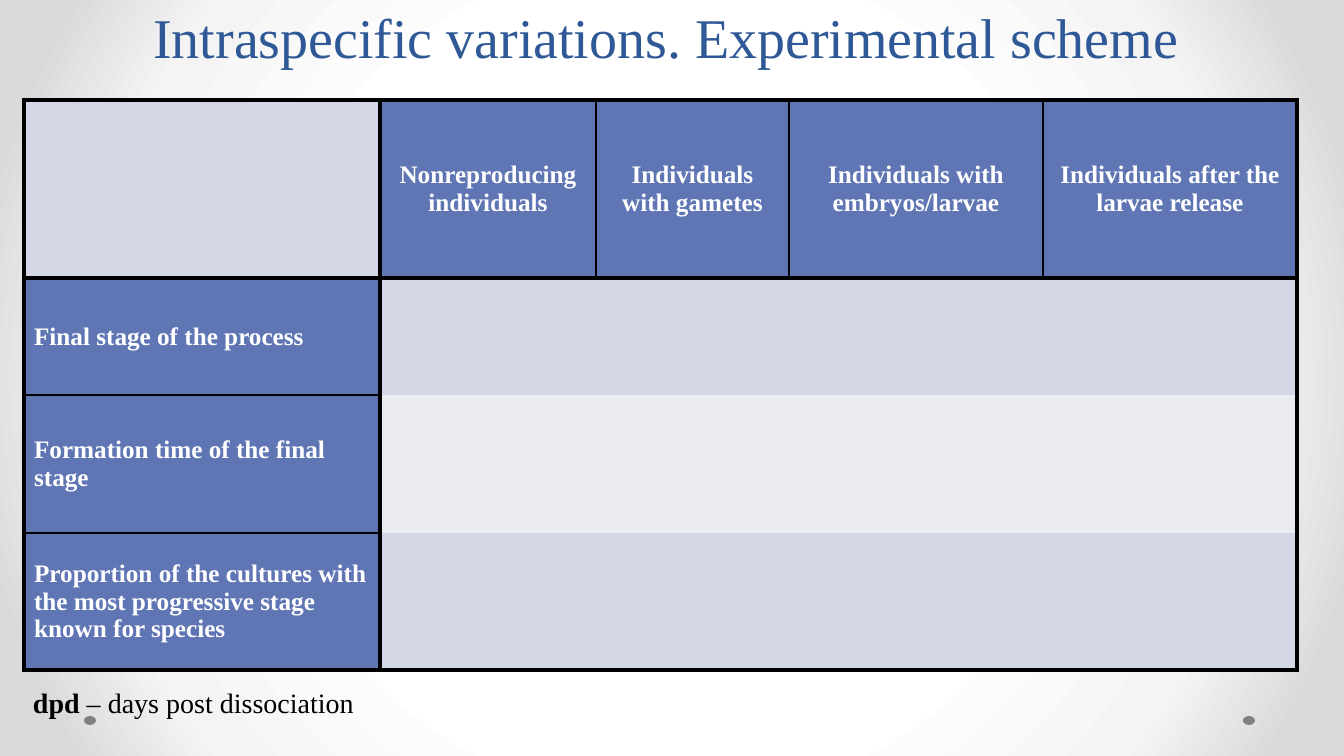
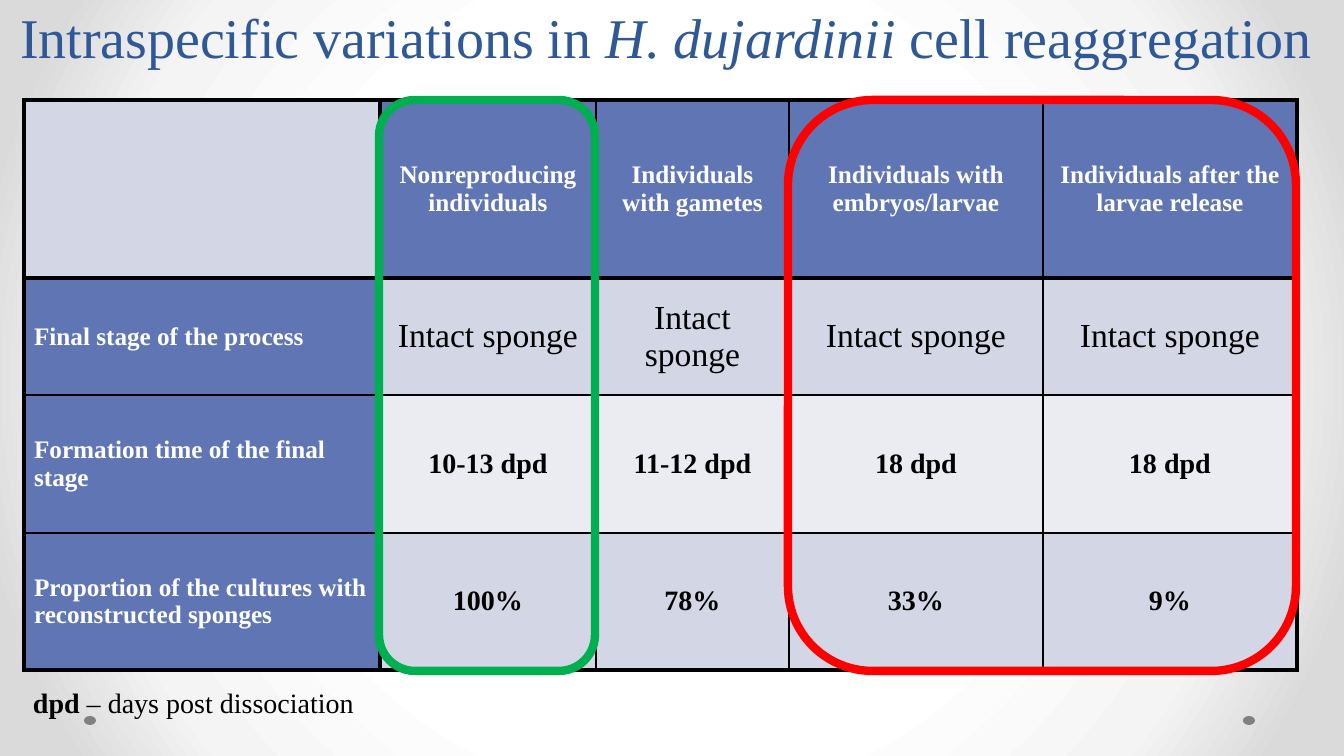
from itertools import accumulate

from pptx import Presentation
from pptx.dml.color import RGBColor
from pptx.enum.shapes import MSO_SHAPE as Shape
from pptx.enum.text import MSO_ANCHOR as Anchor, MSO_AUTO_SIZE as AutoSize, PP_ALIGN as Align
from pptx.oxml import parse_xml
from pptx.oxml.ns import nsdecls, qn
from pptx.util import Emu, Pt

SLIDE_W, SLIDE_H = 1344, 756
EMU_PER_PX = 12192000 / SLIDE_W

FONT = "Times New Roman"
TITLE_BLUE = RGBColor(0x2F, 0x58, 0x97)
HEADER_BLUE = RGBColor(0x60, 0x76, 0xB4)
BAND_DARK = RGBColor(0xD2, 0xD6, 0xE5)
BAND_LIGHT = RGBColor(0xEA, 0xEC, 0xF2)
DOT_GREY = RGBColor(0x80, 0x80, 0x80)
GREEN = RGBColor(0x00, 0xB0, 0x50)
RED = RGBColor(0xFF, 0x00, 0x00)
BLACK = RGBColor(0x00, 0x00, 0x00)
WHITE = RGBColor(0xFF, 0xFF, 0xFF)
BACKDROP_STOPS = [(50, "FFFFFF"), (76, "F4F4F4"), (92, "DADADA")]

TABLE_LEFT, TABLE_TOP = 24, 100
COLUMN_WIDTHS = [356, 216, 193, 254, 254]
ROW_HEIGHTS = [178, 117, 138, 137]
COLUMN_EDGES = list(accumulate(COLUMN_WIDTHS, initial=TABLE_LEFT))
THICK, THIN = Pt(3), Pt(1)

HEADERS = ["", "Nonreproducing individuals", "Individuals with gametes",
           "Individuals with embryos/larvae", "Individuals after the larvae release"]
FINAL_STAGE = "Final stage of the process"
FORMATION_TIME = "Formation time of the final stage"
SCHEME_ROWS = [
    HEADERS,
    [FINAL_STAGE] + [""] * 4,
    [FORMATION_TIME] + [""] * 4,
    ["Proportion of the cultures with the most progressive stage known for species"] + [""] * 4,
]
RESULT_ROWS = [
    HEADERS,
    [FINAL_STAGE] + ["Intact sponge"] * 4,
    [FORMATION_TIME, "10-13 dpd", "11-12 dpd", "18 dpd", "18 dpd"],
    ["Proportion of the cultures with reconstructed sponges", "100%", "78%", "33%", "9%"],
]


def px(*lengths):
    return [Emu(round(length * EMU_PER_PX)) for length in lengths]


def write_text(frame, *runs, size, color, bold=False, align=Align.LEFT,
               anchor=Anchor.TOP, line_spacing=None, space_before=None):
    """Fill one paragraph; a run is a string or a (string, font overrides) pair."""
    frame.word_wrap = True
    frame.vertical_anchor = anchor
    paragraph = frame.paragraphs[0]
    paragraph.alignment = align
    paragraph.line_spacing = line_spacing
    paragraph.space_before = space_before
    for entry in runs:
        text, overrides = (entry, {}) if isinstance(entry, str) else entry
        run = paragraph.add_run()
        run.text = text
        font = run.font
        font.name, font.size, font.bold = FONT, Pt(size), bold
        font.color.rgb = color
        for attribute, value in overrides.items():
            setattr(font, attribute, value)


def add_outline_shape(slide, kind, box, fill=None, line=None, line_width=None):
    shape = slide.shapes.add_shape(kind, *px(*box))
    shape.shadow.inherit = False
    if fill is None:
        shape.fill.background()
    else:
        shape.fill.solid()
        shape.fill.fore_color.rgb = fill
    if line is None:
        shape.line.fill.background()
    else:
        shape.line.color.rgb = line
        shape.line.width = Pt(line_width)
    return shape


def set_backdrop(master):
    stops = "".join(f'<a:gs pos="{position * 1000}"><a:srgbClr val="{color}"/></a:gs>'
                    for position, color in BACKDROP_STOPS)
    content = master.element.find(qn("p:cSld"))
    previous = content.find(qn("p:bg"))
    if previous is not None:
        content.remove(previous)
    content.insert(0, parse_xml(
        f'<p:bg {nsdecls("p", "a")}><p:bgPr><a:gradFill rotWithShape="1">'
        f'<a:gsLst>{stops}</a:gsLst><a:path path="circle">'
        '<a:fillToRect l="50000" t="50000" r="50000" b="50000"/></a:path>'
        '</a:gradFill><a:effectLst/></p:bgPr></p:bg>'))


def move_dots_to_layout(slide):
    """Draw the two footer dots and let the layout carry them for every slide."""
    layout = slide.slide_layout
    tree = layout.element.cSld.spTree
    for placeholder in list(layout.placeholders)[1:]:
        tree.remove(placeholder.element)
    for left in (84, 1243):
        dot = add_outline_shape(slide, Shape.OVAL, (left, 716, 12, 9), fill=DOT_GREY)
        tree.append(dot.element)


def add_titled_slide(prs, *title_runs):
    slide = prs.slides.add_slide(prs.slide_layouts[5])
    title = slide.shapes.title
    title.left, title.top, title.width, title.height = px(-12, 0, 1356, 75)
    write_text(title.text_frame, *title_runs, size=40, color=TITLE_BLUE,
               align=Align.CENTER, anchor=Anchor.BOTTOM, line_spacing=Pt(58))
    title.text_frame.auto_size = AutoSize.NONE
    return slide


def set_borders(cell, row, column, is_blank):
    """Thick lines frame the table, header row and first column; blanks have no thin ones."""
    def weight(edge, count):
        return THICK if edge in (0, 1, count) else THIN

    columns, rows = len(COLUMN_WIDTHS), len(ROW_HEIGHTS)
    sides = {"lnL": weight(column, columns), "lnR": weight(column + 1, columns),
             "lnT": weight(row, rows), "lnB": weight(row + 1, rows)}
    properties = cell._tc.get_or_add_tcPr()
    for side, width in sides.items():
        paint = ("<a:noFill/>" if is_blank and width == THIN
                 else f'<a:solidFill><a:srgbClr val="{BLACK}"/></a:solidFill>')
        properties.append(parse_xml(
            f'<a:{side} {nsdecls("a")} w="{width}">{paint}</a:{side}>'))


def fill_cell(cell, text, row, column):
    is_header = (row == 0) != (column == 0)
    set_borders(cell, row, column, not text)
    cell.fill.solid()
    band = BAND_LIGHT if row == 2 else BAND_DARK
    cell.fill.fore_color.rgb = HEADER_BLUE if is_header else band
    cell.vertical_anchor = Anchor.MIDDLE
    if not text:
        return
    if is_header:
        style = dict(size=18, color=WHITE, bold=True)
    elif row == 1:
        style = dict(size=24, color=BLACK)
    else:
        style = dict(size=20, color=BLACK, bold=True)
    write_text(cell.text_frame, text, anchor=None,
               align=Align.CENTER if column else Align.LEFT, **style)


def add_stage_table(slide, rows):
    box = px(TABLE_LEFT, TABLE_TOP, sum(COLUMN_WIDTHS), sum(ROW_HEIGHTS))
    table = slide.shapes.add_table(len(rows), len(COLUMN_WIDTHS), *box).table
    table.horz_banding = False
    for column, width in zip(table.columns, px(*COLUMN_WIDTHS)):
        column.width = width
    for row, height in zip(table.rows, px(*ROW_HEIGHTS)):
        row.height = height
    for r, texts in enumerate(rows):
        for c, text in enumerate(texts):
            fill_cell(table.cell(r, c), text, r, c)


def add_abbreviation_note(slide):
    note = slide.shapes.add_textbox(*px(23, 681, 1274, 56))
    write_text(note.text_frame, ("dpd", {"bold": True}), " – days post dissociation",
               size=20, color=BLACK, space_before=Pt(4))


def frame_columns(slide, first, last, color):
    left, right = COLUMN_EDGES[first], COLUMN_EDGES[last + 1]
    box = (left - 1, TABLE_TOP, right - left, sum(ROW_HEIGHTS) + 1)
    add_outline_shape(slide, Shape.ROUNDED_RECTANGLE, box, line=color, line_width=6)


def main():
    prs = Presentation()
    prs.slide_width, prs.slide_height = px(SLIDE_W, SLIDE_H)
    set_backdrop(prs.slide_master)

    scheme = add_titled_slide(prs, "Intraspecific variations. Experimental scheme")
    move_dots_to_layout(scheme)
    results = add_titled_slide(prs, "Intraspecific variations in ",
                               ("H. dujardinii ", {"italic": True}), "cell reaggregation")

    for slide, rows in ((scheme, SCHEME_ROWS), (results, RESULT_ROWS)):
        add_stage_table(slide, rows)
        add_abbreviation_note(slide)

    frame_columns(results, 1, 1, GREEN)
    frame_columns(results, 3, 4, RED)
    prs.save("out.pptx")


if __name__ == "__main__":
    main()
